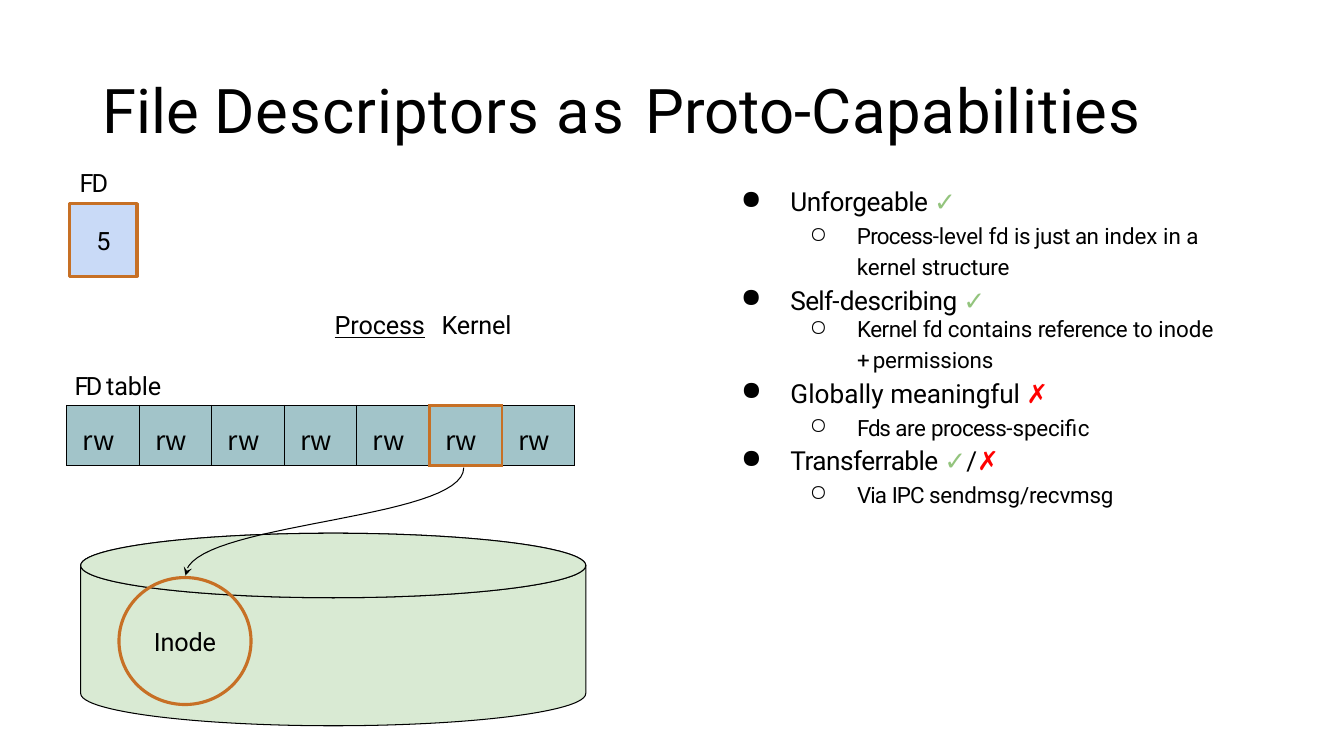
from lxml.etree import SubElement
from pptx import Presentation
from pptx.dml.color import RGBColor
from pptx.enum.shapes import MSO_SHAPE
from pptx.enum.text import MSO_ANCHOR, MSO_AUTO_SIZE, PP_ALIGN
from pptx.oxml.ns import qn
from pptx.util import Inches, Pt

COLORS = {
    "text": "000000",
    "accent": "C77025",
    "disk": "D9EAD3",
    "node": "C9DAF7",
    "cell": "A2C4C9",
    "yes": "93C47D",
    "no": "FF0000",
}
FONT = "Roboto"
CELL_FONT = "Noto Sans CJK JP"

TITLE = [("File ", -0.1), ("Descriptors ", 0.7), ("as ", 1.9),
         ("Proto-", 0), ("Capabilities", 0.5)]

# Each point is (level, runs); a run is (text, letter spacing, colour).
POINTS_TOP = [
    (0, [("Unforgeable ", -0.3), ("✓", -8, "yes")]),
    (1, [("Process-", -0.5), ("level fd ", -0.1), ("is just an ", -0.3),
         ("index in ", 0), ("a ", -0.3), ("kernel structure", -0.1)]),
    (0, [("Self-", -0.5), ("describing ", -0.3), ("✓", -8, "yes")]),
]
POINTS_END = [
    (1, [("Kernel ", -0.3), ("fd contains ", -0.1), ("reference ", -0.3),
         ("to inode ", 0), ("+ ", -1.7), ("permissions", -0.1)]),
    (0, [("Globally ", 0), ("meaningful ", -0.1), ("✗", -0.8, "no")]),
    (1, [("Fds ", -0.8), ("are ", -0.3), ("process-", -0.4),
         ("specific", -0.1)]),
    (0, [("Transferrable ", -0.4), ("✓", -0.3, "yes"), ("/", -0.3),
         ("✗", -0.3, "no")]),
    (1, [("Via ", -0.6), ("IPC ", -0.7), ("sendmsg/recvmsg", -0.1)]),
]


def rgb(name):
    return RGBColor.from_string(COLORS[name])


def add_run(para, size, text, gap=0, color="text", face=FONT):
    run = para.add_run()
    run.text = text
    run.font.size = Pt(size)
    run.font.name = face
    run.font.color.rgb = rgb(color)
    run.font._element.set("spc", str(round(gap * 100)))
    return run


def set_frame(frame, left=0, top=0):
    frame.word_wrap = True
    frame.margin_left, frame.margin_top = Inches(left), Inches(top)
    frame.margin_right = frame.margin_bottom = 0


def add_title(slide):
    title = slide.shapes.title
    title.left, title.top = Inches(0.92), Inches(0.4)
    title.width, title.height = Inches(11.5), Inches(1.45)
    frame = title.text_frame
    frame.auto_size = MSO_AUTO_SIZE.NONE
    frame.vertical_anchor = MSO_ANCHOR.MIDDLE
    para = frame.paragraphs[0]
    para.alignment = PP_ALIGN.LEFT
    para.line_spacing = 0.9
    for part in TITLE:
        add_run(para, 44, *part)


def add_label(slide, x, y, w, runs, under=False):
    box = slide.shapes.add_textbox(Inches(x), Inches(y), Inches(w), Inches(0.32))
    set_frame(box.text_frame, 0.02, 0.04)
    for part in runs:
        run = add_run(box.text_frame.paragraphs[0], 18, *part)
        run.font.underline = under


def add_points(slide, y, w, h, top, points):
    """Add a two-level bulleted list."""
    box = slide.shapes.add_textbox(Inches(7.33), Inches(y), Inches(w), Inches(h))
    frame = box.text_frame
    set_frame(frame, top=top)
    for i, (level, runs) in enumerate(points):
        para = frame.add_paragraph() if i else frame.paragraphs[0]
        size, left, hang, mark, before, lead = (
            (16, 1.17, 0.47, "○", 1, 1.15) if level
            else (18.7, 0.51, 0.49, "●", 2.7, 1.0))
        para.level = level
        para.space_before = Pt(before)
        para.line_spacing = lead
        props = para._p.get_or_add_pPr()
        props.set("marL", str(Inches(left)))
        props.set("indent", str(-Inches(hang)))
        SubElement(props, qn("a:buChar")).set("char", mark)
        for part in runs:
            add_run(para, size, *part)


def add_form(slide, kind, x, y, w, h, fill=None, line="text", width=0.75, text=""):
    form = slide.shapes.add_shape(kind, Inches(x), Inches(y), Inches(w), Inches(h))
    form.shadow.inherit = False
    if fill:
        form.fill.solid()
        form.fill.fore_color.rgb = rgb(fill)
    else:
        form.fill.background()
    form.line.color.rgb = rgb(line)
    form.line.width = Pt(width)
    if text:
        set_frame(form.text_frame)
        form.text_frame.vertical_anchor = MSO_ANCHOR.MIDDLE
        para = form.text_frame.paragraphs[0]
        para.alignment = PP_ALIGN.CENTER
        add_run(para, 18, text, -0.1)
    return form


def add_disk(slide, x, y, w, h, lid):
    can = add_form(slide, MSO_SHAPE.CAN, x, y, w, h, "disk")
    can.adjustments[0] = lid / h
    add_form(slide, MSO_SHAPE.OVAL, x, y, w, lid, "disk")


def add_curve(slide, x1, y1, x2, y2, steps=32):
    """Draw an S-curve that leaves and arrives vertically, with an arrowhead."""
    mid = (y1 + y2) / 2
    spots = []
    for i in range(1, steps + 1):
        t = i / steps
        a, b, c, d = (1 - t) ** 3, 3 * t * (1 - t) ** 2, 3 * t * t * (1 - t), t ** 3
        spots.append((Inches((a + b) * x1 + (c + d) * x2),
                      Inches(a * y1 + (b + c) * mid + d * y2)))
    pen = slide.shapes.build_freeform(Inches(x1), Inches(y1))
    pen.add_line_segments(spots, close=False)
    curve = pen.convert_to_shape()
    curve.shadow.inherit = False
    curve.fill.background()
    curve.line.color.rgb = rgb("text")
    curve.line.width = Pt(0.75)
    tail = SubElement(curve.line._get_or_add_ln(), qn("a:tailEnd"))
    for key, value in (("type", "stealth"), ("w", "med"), ("len", "med")):
        tail.set(key, value)


def set_edge(cell, side, strong):
    edge = SubElement(cell._tc.get_or_add_tcPr(), qn("a:ln" + side))
    edge.set("w", str(Pt(2.25 if strong else 0.75)))
    fill = SubElement(edge, qn("a:solidFill"))
    SubElement(fill, qn("a:srgbClr")).set("val", COLORS["accent" if strong else "text"])


def add_slots(slide, count, chosen):
    """Add the one-row table and frame its chosen cell."""
    table = slide.shapes.add_table(1, count, Inches(0.66), Inches(4.02),
                                   Inches(0.72 * count), Inches(0.6)).table
    table.first_row = table.horz_banding = False
    for i, cell in enumerate(table.rows[0].cells):
        table.columns[i].width = Inches(0.72)
        cell.margin_left, cell.margin_top = Inches(0.16), Inches(0.14)
        cell.margin_right = cell.margin_bottom = 0
        set_edge(cell, "L", i in (chosen, chosen + 1))
        set_edge(cell, "R", i in (chosen - 1, chosen))
        for side in "TB":
            set_edge(cell, side, i == chosen)
        cell.fill.solid()
        cell.fill.fore_color.rgb = rgb("cell")
        para = cell.text_frame.paragraphs[0]
        para.space_before = Pt(7.5)
        add_run(para, 19, "rw", -0.2, face=CELL_FONT)


def main():
    deck = Presentation()
    deck.slide_width, deck.slide_height = Inches(13.33), Inches(7.5)
    slide = deck.slides.add_slide(deck.slide_layouts[5])
    add_title(slide)
    add_points(slide, 1.72, 5.06, 1.38, 0.12, POINTS_TOP)
    add_points(slide, 3.07, 4.75, 2, 0.02, POINTS_END)
    add_disk(slide, 0.8, 5.29, 5.01, 1.91, 0.64)
    add_form(slide, MSO_SHAPE.OVAL, 1.18, 5.73, 1.31, 1.26,
             line="accent", width=2.25, text="Inode")
    add_form(slide, MSO_SHAPE.RECTANGLE, 0.69, 2.02, 0.67, 0.72,
             "node", "accent", 2.25, "5")
    add_curve(slide, 4.6, 4.64, 1.84, 5.71)
    add_label(slide, 0.77, 1.62, 0.6, [("FD", -1.4)])
    add_label(slide, 3.3, 3.03, 1, [("Process", -0.1)], under=True)
    add_label(slide, 4.36, 3.03, 1, [("Kernel", -0.1)])
    add_label(slide, 0.72, 3.63, 1.2, [("FD ", -1.8), ("table", -0.1)])
    add_slots(slide, 7, 5)
    deck.save("out.pptx")


if __name__ == "__main__":
    main()
